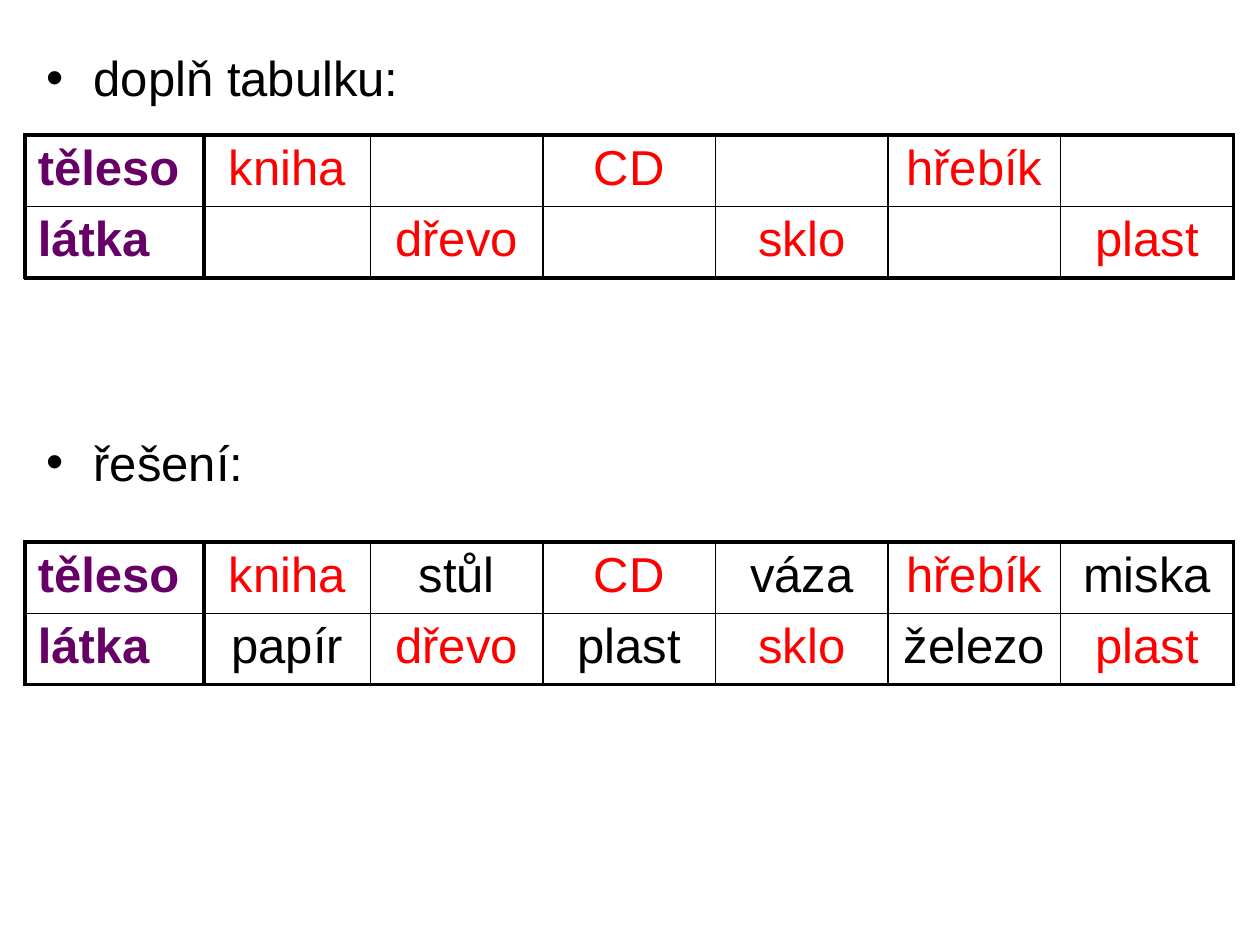
from dataclasses import dataclass

import lxml.etree
import pptx
import pptx.dml.color
import pptx.enum.text
import pptx.oxml.ns
import pptx.util


@dataclass(frozen=True)
class Theme:
    font: str = "Arial"
    size: int = 28
    text: str = "000000"
    given: str = "FF0000"
    head: str = "660066"
    line: str = "000000"
    thin: float = 1
    edge: float = 2.25
    split: float = 3


@dataclass(frozen=True)
class Word:
    text: str
    given: bool = False


@dataclass(frozen=True)
class Sheet:
    top: float
    solved: bool


THEME = Theme()
ALIGN = pptx.enum.text.PP_ALIGN

# The slide is a grid of 100 columns by 75 rows
COLS, ROWS = 100, 75
WIDE, HIGH = pptx.util.Inches(10), pptx.util.Inches(7.5)

# Table columns and row height, in grid units
LEFT = 2
SPANS = [14.2, 13.2] + [13.7] * 5
ROW = 5.4

HEADS = ["těleso", "látka"]
PAIRS = [
    (Word("kniha", True), Word("papír")),
    (Word("stůl"), Word("dřevo", True)),
    (Word("CD", True), Word("plast")),
    (Word("váza"), Word("sklo", True)),
    (Word("hřebík", True), Word("železo")),
    (Word("miska"), Word("plast", True)),
]
SHEETS = [Sheet(10.7, False), Sheet(43, True)]
TASKS = ["doplň tabulku:", "řešení:"]


def across(cols: float) -> int:
    return round(WIDE * cols / COLS)


def down(rows: float) -> int:
    return round(HIGH * rows / ROWS)


def add_run(para, text: str, color: str, bold: bool = False) -> None:
    run = para.add_run()
    run.text = text
    run.font.name = THEME.font
    run.font.size = pptx.util.Pt(THEME.size)
    run.font.bold = bold
    run.font.color.rgb = pptx.dml.color.RGBColor.from_string(color)


def add_tag(root, name: str, **attrs: str):
    return lxml.etree.SubElement(root, pptx.oxml.ns.qn(name), **attrs)


def add_tasks(slide) -> None:
    box = slide.shapes.add_textbox(across(2.7), down(3.3), across(93.3), down(51.2))
    frame = box.text_frame
    frame.word_wrap = True
    for i, task in enumerate(TASKS):
        para = frame.paragraphs[0] if i == 0 else frame.add_paragraph()
        # The gap leaves room for the table between the two tasks
        if i:
            para.space_before = pptx.util.Pt(186)
        props = para._p.get_or_add_pPr()
        dent = across(3.75)
        props.set("marL", str(dent))
        props.set("indent", str(-dent))
        add_tag(props, "a:buFont", typeface=THEME.font)
        add_tag(props, "a:buChar", char="•")
        add_run(para, task, THEME.text)


def draw_edges(cell, row: int, col: int) -> None:
    last = len(SPANS) - 1
    sides = {
        "a:lnL": {0: THEME.edge, 1: THEME.split}.get(col, THEME.thin),
        "a:lnR": {0: THEME.split, last: THEME.edge}.get(col, THEME.thin),
        "a:lnT": THEME.edge if row == 0 else THEME.thin,
        "a:lnB": THEME.edge if row == len(HEADS) - 1 else THEME.thin,
    }
    props = cell._tc.get_or_add_tcPr()
    for name, width in sides.items():
        line = add_tag(props, name, w=str(pptx.util.Pt(width)))
        add_tag(add_tag(line, "a:solidFill"), "a:srgbClr", val=THEME.line)


def add_sheet(slide, sheet: Sheet) -> None:
    frame = slide.shapes.add_table(
        len(HEADS), len(SPANS), across(LEFT), down(sheet.top),
        across(sum(SPANS)), down(ROW * len(HEADS)))
    table = frame.table
    table.first_row = table.horz_banding = False
    for col, span in enumerate(SPANS):
        table.columns[col].width = across(span)
    for row, head in enumerate(HEADS):
        table.rows[row].height = down(ROW)
        for col in range(len(SPANS)):
            cell = table.cell(row, col)
            draw_edges(cell, row, col)
            cell.fill.background()
            para = cell.text_frame.paragraphs[0]
            if col == 0:
                add_run(para, head, THEME.head, True)
                continue
            word = PAIRS[col - 1][row]
            para.alignment = ALIGN.CENTER
            if word.given or sheet.solved:
                add_run(para, word.text, THEME.given if word.given else THEME.text)


def main() -> None:
    deck = pptx.Presentation()
    deck.slide_width, deck.slide_height = WIDE, HIGH
    slide = deck.slides.add_slide(deck.slide_layouts[6])
    # Task lines
    add_tasks(slide)
    # Exercise and its solution
    for sheet in SHEETS:
        add_sheet(slide, sheet)
    deck.save("out.pptx")


if __name__ == "__main__":
    main()
